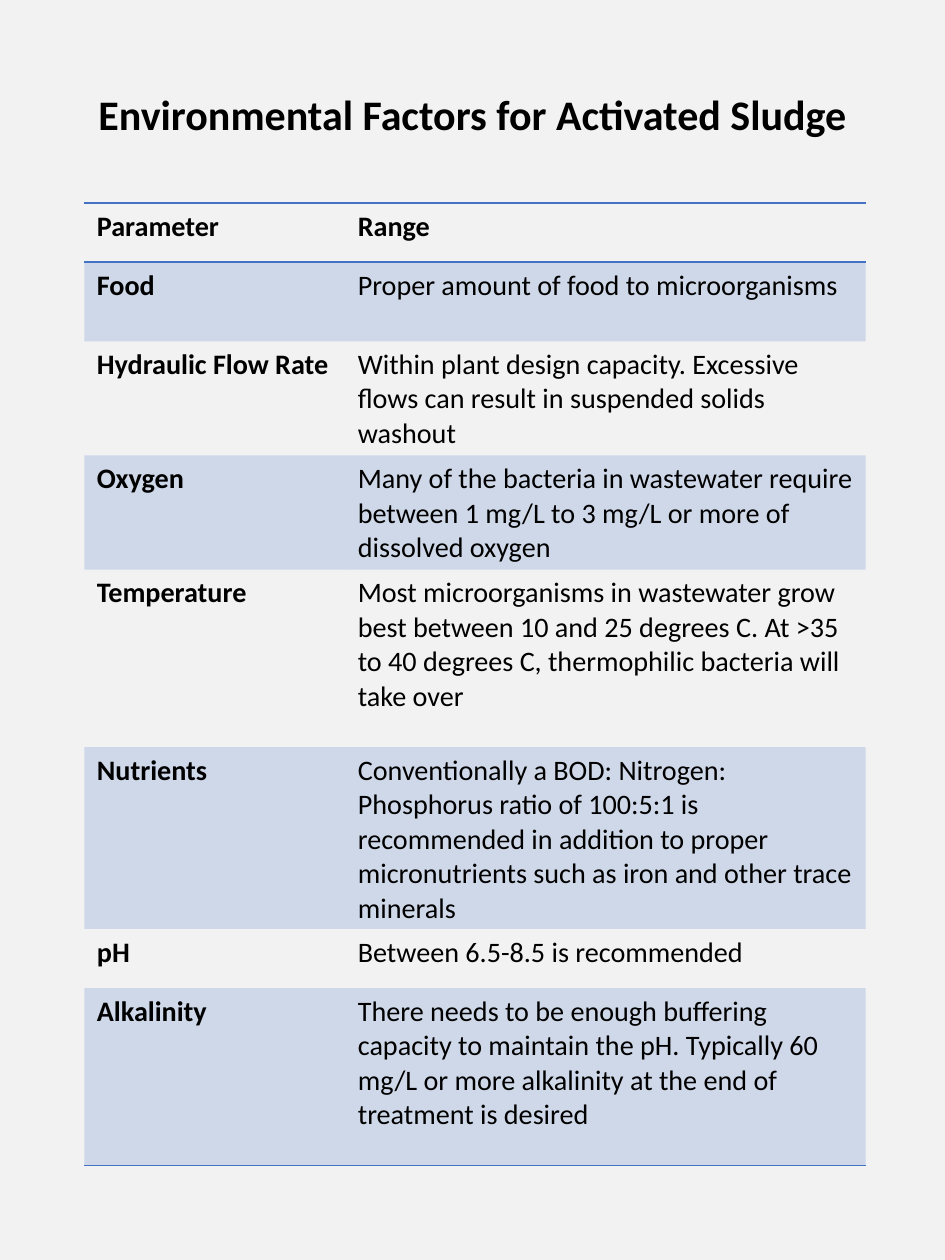
from lxml import etree
from pptx import Presentation, util as u
from pptx.dml.color import RGBColor
from pptx.enum import text as t
from pptx.oxml.ns import qn

PAPER = RGBColor(0xF2, 0xF2, 0xF2)
INK = RGBColor(0, 0, 0)
BLUE = RGBColor(0x44, 0x72, 0xC4)
PLAIN = "{2D5ABB26-0587-4C30-8999-92F81FD0307C}"  # no style, no grid

COLS = (5.26, 10.49)
# parameter, range, row height in cm
ROWS = (
    ("Parameter", "Range", 1.19),
    ("Food", "Proper amount of food to microorganisms", 1.6),
    ("Hydraulic Flow Rate", "Within plant design capacity. Excessive flows can "
     "result in suspended solids washout", 2.26),
    ("Oxygen", "Many of the bacteria in wastewater require between 1 mg/L to "
     "3 mg/L or more of dissolved oxygen", 2.26),
    ("Temperature", "Most microorganisms in wastewater grow best between 10 and "
     "25 degrees C. At >35 to 40 degrees C, thermophilic bacteria will take over", 3.58),
    ("Nutrients", "Conventionally a BOD: Nitrogen: Phosphorus ratio of 100:5:1 is "
     "recommended in addition to proper micronutrients such as iron and other "
     "trace minerals", 2.87),
    ("pH", "Between 6.5-8.5 is recommended", 1.19),
    ("Alkalinity", "There needs to be enough buffering capacity to maintain the pH. "
     "Typically 60 mg/L or more alkalinity at the end of treatment is desired", 3.58),
)


def write(frame, words, size=16.1, bold=False, align=t.PP_ALIGN.LEFT):
    para = frame.paragraphs[0]
    para.alignment = align
    run = para.add_run()
    run.text = words
    font = run.font
    font.name, font.size, font.bold = "Calibri", u.Pt(size), bold
    font.color.rgb = INK


def tint(cell, alpha):
    """Fill the cell with blue at the given opacity in percent."""
    cell.fill.solid()
    cell.fill.fore_color.rgb = BLUE
    color = next(cell._tc.tcPr.iter(qn("a:srgbClr")))
    etree.SubElement(color, qn("a:alpha"), val=str(alpha * 1000))


def rule(cell, sides):
    """Draw a blue line on each named side; lines must come before the fill."""
    for spot, side in enumerate(sides):
        line = etree.Element(qn(f"a:ln{side}"), w=str(u.Pt(1)))
        fill = etree.SubElement(line, qn("a:solidFill"))
        etree.SubElement(fill, qn("a:srgbClr"), val=str(BLUE))
        cell._tc.get_or_add_tcPr().insert(spot, line)


def add_title(slide, left, top, width, height):
    box = slide.shapes.add_textbox(*map(u.Cm, (left, top, width, height)))
    frame = box.text_frame
    frame.word_wrap = False
    frame.auto_size = t.MSO_AUTO_SIZE.SHAPE_TO_FIT_TEXT
    write(frame, "Environmental Factors for Activated Sludge",
          size=24, bold=True, align=t.PP_ALIGN.CENTER)


def add_factors(slide, left, top, width, height):
    shape = slide.shapes.add_table(len(ROWS), len(COLS),
                                   *map(u.Cm, (left, top, width, height)))
    table = shape.table
    table.horz_banding = False
    table._tbl.tblPr.find(qn("a:tableStyleId")).text = PLAIN
    for col, size in zip(table.columns, COLS):
        col.width = u.Cm(size)
    last = len(ROWS) - 1
    for r, (*words, tall) in enumerate(ROWS):
        table.rows[r].height = u.Cm(tall)
        sides = {0: "TB", last: "B"}.get(r, "")
        for c, word in enumerate(words):
            cell = table.cell(r, c)
            write(cell.text_frame, word, bold=r == 0 or c == 0)
            if r % 2:
                tint(cell, 20)
            else:
                cell.fill.background()
            rule(cell, sides)


def main():
    deck = Presentation()
    deck.slide_width, deck.slide_height = u.Cm(19.05), u.Cm(25.4)
    slide = deck.slides.add_slide(deck.slide_layouts[6])
    slide.background.fill.solid()
    slide.background.fill.fore_color.rgb = PAPER
    add_title(slide, 1.65, 1.65, 15.75, 1.27)
    add_factors(slide, 1.7, 4.09, sum(COLS), sum(row[-1] for row in ROWS))
    deck.save("out.pptx")


if __name__ == "__main__":
    main()
